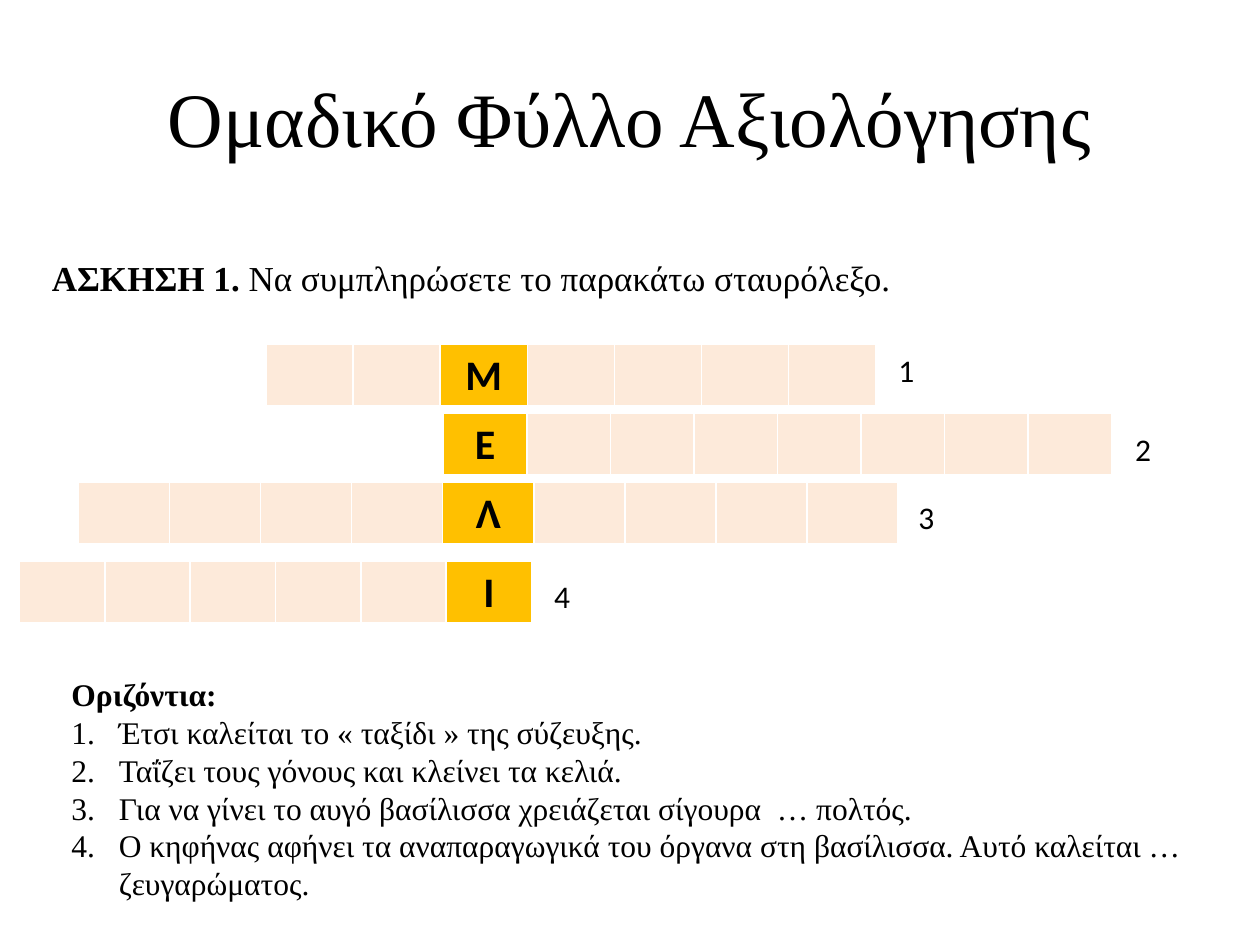
from typing import NamedTuple

from lxml.etree import SubElement
from pptx import Presentation
from pptx.dml.color import RGBColor
from pptx.enum.text import MSO_ANCHOR, PP_ALIGN
from pptx.oxml.ns import qn
from pptx.util import Pt

BLACK = RGBColor(0x00, 0x00, 0x00)
WHITE = RGBColor(0xFF, 0xFF, 0xFF)
PEACH = RGBColor(0xFD, 0xEA, 0xDA)
AMBER = RGBColor(0xFF, 0xC0, 0x00)
SERIF = "Times New Roman"
SANS = "Calibri"
ROW_HEIGHT = 36
LABEL_SIZE = (24, 29)
HANGING_INDENT = 27
BORDER_WIDTHS = {"a:lnL": 1, "a:lnR": 1, "a:lnT": 1, "a:lnB": 3}


class Box(NamedTuple):
    left: float
    top: float
    width: float
    height: float


class CrosswordRow(NamedTuple):
    number: int
    letter: str
    letter_index: int
    cell_count: int
    left: float
    top: float
    width: float
    label_left: float
    label_top: float


ROWS = [
    CrosswordRow(1, "Μ", 2, 7, 152, 196.8, 348.5, 506.2, 196.8),
    CrosswordRow(2, "Ε", 0, 8, 253.3, 236.2, 382, 641.5, 241.9),
    CrosswordRow(3, "Λ", 4, 9, 44.8, 275.7, 468.6, 517.7, 281.3),
    CrosswordRow(4, "Ι", 5, 6, 11.2, 320.7, 292.6, 309.6, 326.2),
]

CLUES = [
    "Έτσι καλείται το « ταξίδι » της σύζευξης.",
    "Ταΐζει τους γόνους και κλείνει τα κελιά.",
    "Για να γίνει το αυγό βασίλισσα χρειάζεται σίγουρα  … πολτός.",
    "Ο κηφήνας αφήνει τα αναπαραγωγικά του όργανα στη βασίλισσα. "
    "Αυτό καλείται … ζευγαρώματος.",
]


def style_run(run, size: float, name: str, bold: bool = False) -> None:
    run.font.size = Pt(size)
    run.font.name = name
    run.font.bold = bold
    run.font.color.rgb = BLACK


def add_text_frame(slide, box: Box, wrap: bool = True):
    text_frame = slide.shapes.add_textbox(*map(Pt, box)).text_frame
    text_frame.word_wrap = wrap
    return text_frame


def add_title(slide) -> None:
    text_frame = add_text_frame(slide, Box(36, 21.6, 648, 90))
    text_frame.vertical_anchor = MSO_ANCHOR.MIDDLE
    text_frame.text = "Ομαδικό Φύλλο Αξιολόγησης"
    paragraph = text_frame.paragraphs[0]
    paragraph.alignment = PP_ALIGN.CENTER
    style_run(paragraph.runs[0], 44, SERIF)


def add_exercise(slide) -> None:
    text_frame = add_text_frame(slide, Box(22.5, 112.5, 680.4, 399.6))
    text_frame.margin_top = Pt(34)
    paragraph = text_frame.paragraphs[0]
    paragraph.text = "ΑΣΚΗΣΗ 1. "
    paragraph.add_run().text = "Να συμπληρώσετε το παρακάτω σταυρόλεξο."
    heading, instruction = paragraph.runs
    style_run(heading, 20, SERIF, bold=True)
    style_run(instruction, 20, SERIF)


def add_cell_borders(cell) -> None:
    properties = cell._tc.get_or_add_tcPr()
    for tag, width in BORDER_WIDTHS.items():
        line = SubElement(properties, qn(tag), w=str(Pt(width)))
        fill = SubElement(line, qn("a:solidFill"))
        SubElement(fill, qn("a:srgbClr"), val=str(WHITE))


def add_crossword_row(slide, row: CrosswordRow) -> None:
    """Draw the cells of one answer, with its key letter and number."""
    box = Box(row.left, row.top, row.width, ROW_HEIGHT)
    table = slide.shapes.add_table(1, row.cell_count, *map(Pt, box)).table
    table.first_row = False
    table.horz_banding = False
    for index, column in enumerate(table.columns):
        column.width = Pt(row.width / row.cell_count)
        cell = table.cell(0, index)
        add_cell_borders(cell)
        cell.fill.solid()
        cell.fill.fore_color.rgb = AMBER if index == row.letter_index else PEACH

    letter_cell = table.cell(0, row.letter_index)
    letter_cell.text_frame.text = row.letter
    paragraph = letter_cell.text_frame.paragraphs[0]
    paragraph.alignment = PP_ALIGN.CENTER
    style_run(paragraph.runs[0], 24, SANS, bold=True)

    label = add_text_frame(
        slide, Box(row.label_left, row.label_top, *LABEL_SIZE), wrap=False
    )
    label.text = str(row.number)
    style_run(label.paragraphs[0].runs[0], 18, SANS)


def number_paragraph(paragraph) -> None:
    properties = paragraph._p.get_or_add_pPr()
    properties.set("marL", str(Pt(HANGING_INDENT)))
    properties.set("indent", str(-Pt(HANGING_INDENT)))
    SubElement(properties, qn("a:buFont"), typeface="+mj-lt")
    SubElement(properties, qn("a:buAutoNum"), type="arabicPeriod")


def add_clues(slide) -> None:
    text_frame = add_text_frame(slide, Box(33.8, 382.3, 669.6, 159.8))
    text_frame.text = "\n".join(["Οριζόντια:", *CLUES])
    heading, *clues = text_frame.paragraphs
    style_run(heading.runs[0], 18, SERIF, bold=True)
    for paragraph in clues:
        number_paragraph(paragraph)
        style_run(paragraph.runs[0], 18, SERIF)


def main() -> None:
    presentation = Presentation()
    presentation.slide_width = Pt(720)
    presentation.slide_height = Pt(540)
    slide = presentation.slides.add_slide(presentation.slide_layouts[6])
    add_title(slide)
    add_exercise(slide)
    for row in ROWS:
        add_crossword_row(slide, row)
    add_clues(slide)
    presentation.save("out.pptx")


if __name__ == "__main__":
    main()
